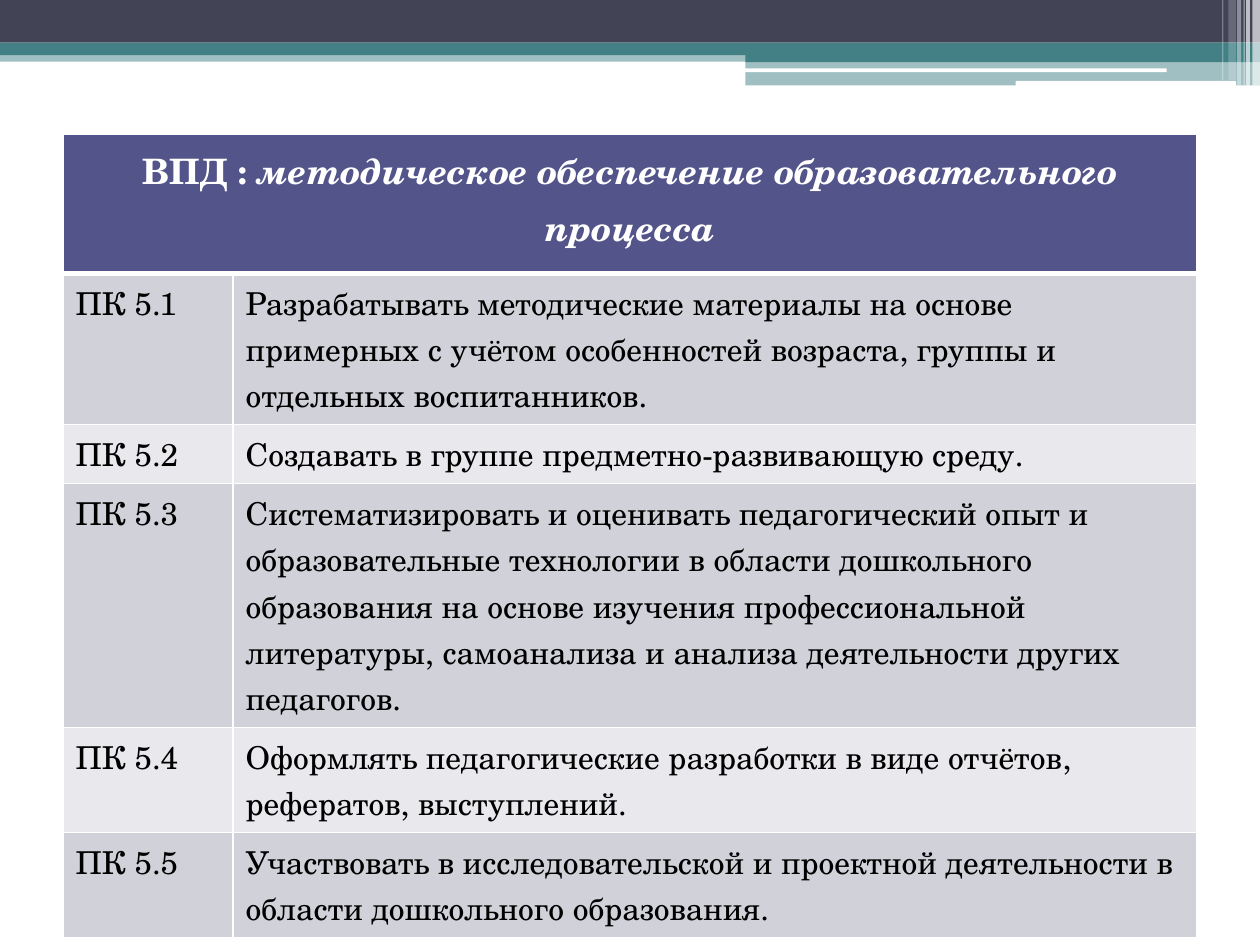
import pptx
import pptx.util
import pptx.dml.color
import pptx.enum.shapes
import pptx.enum.text
import pptx.oxml.ns
import lxml.etree

Pt = pptx.util.Pt
Kind = pptx.enum.shapes.MSO_SHAPE
Align = pptx.enum.text.PP_ALIGN
qn = pptx.oxml.ns.qn

DARK, TEAL, WHITE, BLACK = "424456", "438086", "FFFFFF", "000000"
HEAD, BANDS = "53548A", ("D1D1DA", "E9E9ED")
LINE, PAD = 26.4, 7.2


def color(text):
    return pptx.dml.color.RGBColor.from_string(text)


class Page:
    font = "TeX Gyre Schola"

    def __init__(self, deck):
        self.slide = deck.slides.add_slide(deck.slide_layouts[6])

    def bar(self, left, top, width, height, fill, alpha=100, kind=Kind.RECTANGLE):
        box = self.slide.shapes.add_shape(kind, Pt(left), Pt(top), Pt(width), Pt(height))
        box.shadow.inherit = False
        box.line.fill.background()
        box.fill.solid()
        box.fill.fore_color.rgb = color(fill)
        if alpha < 100:
            tint = box.fill._xPr.find(".//" + qn("a:srgbClr"))
            lxml.etree.SubElement(tint, qn("a:alpha"), val=str(alpha * 1000))

    def edge(self, cell, top, base):
        props = cell._tc.get_or_add_tcPr()
        for side, width in (("L", 1), ("R", 1), ("T", top), ("B", base)):
            line = lxml.etree.SubElement(props, qn("a:ln" + side), w=str(Pt(width)))
            fill = lxml.etree.SubElement(line, qn("a:solidFill"))
            lxml.etree.SubElement(fill, qn("a:srgbClr"), val=WHITE)

    def paint(self, cell, fill):
        cell.fill.solid()
        cell.fill.fore_color.rgb = color(fill)

    def text(self, cell, runs, size, ink, align=Align.LEFT, space=1.0):
        para = cell.text_frame.paragraphs[0]
        para.alignment = align
        para.line_spacing = space
        for words, bold, slant in runs:
            run = para.add_run()
            run.text = words
            run.font.name = self.font
            run.font.size = Pt(size)
            run.font.bold = bold
            run.font.italic = slant
            run.font.color.rgb = color(ink)

    def table(self, left, top, widths, title, items):
        highs = [79.2] + [lines * LINE + PAD for _, _, lines in items]
        frame = self.slide.shapes.add_table(
            len(highs), len(widths), Pt(left), Pt(top), Pt(sum(widths)), Pt(sum(highs)))
        grid = frame.table
        for col, width in zip(grid.columns, widths):
            col.width = Pt(width)
        for num, (row, high) in enumerate(zip(grid.rows, highs)):
            row.height = Pt(high)
            for cell in row.cells:
                self.edge(cell, 3 if num == 1 else 1, 3 if num == 0 else 1)
                self.paint(cell, BANDS[(num - 1) % 2] if num else HEAD)
        grid.cell(0, 0).merge(grid.cell(0, 1))
        self.text(grid.cell(0, 0), title, 20, WHITE, Align.CENTER, 1.05)
        for num, (code, skill, _) in enumerate(items, 1):
            for col, part in enumerate((code, skill)):
                self.text(grid.cell(num, col), [(part, False, False)], 18, BLACK)


def main():
    deck = pptx.Presentation()
    deck.slide_width, deck.slide_height = Pt(720), Pt(540)
    page = Page(deck)

    page.bar(0, 28.8, 720, 6.5, TEAL, 50)
    page.bar(0, 0, 720, 24.4, DARK)
    page.bar(0, 24.4, 720, 7.2, TEAL)
    page.bar(426, 28.3, 294, 7.2, TEAL)
    page.bar(426, 34.6, 294, 14.2, TEAL, 50)
    page.bar(425.5, 39.1, 241.2, 2.2, WHITE, kind=Kind.ROUNDED_RECTANGLE)
    page.bar(580.3, 46.3, 126, 2.9, WHITE, kind=Kind.ROUNDED_RECTANGLE)
    for left, width, high, alpha in (
        (715.7, 4.3, 49, 65),
        (712.1, 2.2, 49, 65),
        (710.6, 0.7, 49, 60),
        (707, 2.2, 49, 40),
        (702, 4.3, 46, 20),
        (698.4, 0.7, 46, 30),
    ):
        page.bar(left, 0, width, high, WHITE, alpha)

    title = [
        ("ВПД : ", True, False),
        ("методическое обеспечение образовательного процесса", True, True),
    ]
    items = [
        ("ПК 5.1", "Разрабатывать методические материалы на основе примерных с учётом "
         "особенностей возраста, группы и отдельных воспитанников.", 3),
        ("ПК 5.2", "Создавать в группе предметно-развивающую среду.", 1),
        ("ПК 5.3", "Систематизировать и оценивать педагогический опыт и образовательные "
         "технологии в области дошкольного образования на основе изучения профессиональной "
         "литературы, самоанализа и анализа деятельности других педагогов.", 5),
        ("ПК 5.4", "Оформлять педагогические разработки в виде отчётов, рефератов, "
         "выступлений.", 2),
        ("ПК 5.5", "Участвовать в исследовательской и проектной деятельности в области "
         "дошкольного образования.", 2),
    ]
    page.table(36, 77, (97.2, 550.8), title, items)
    deck.save("out.pptx")


if __name__ == "__main__":
    main()
